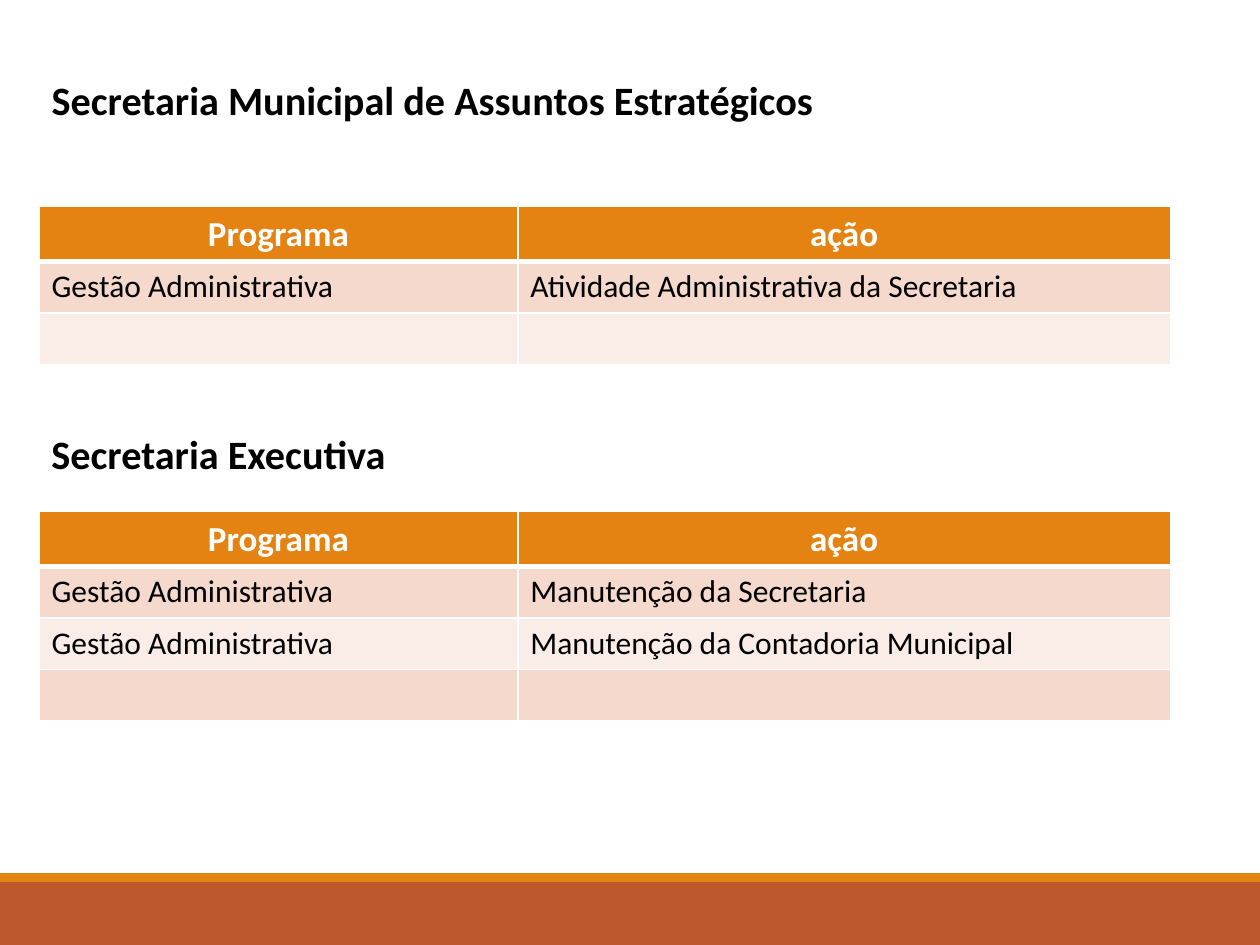
import lxml.etree
import pptx
import pptx.dml.color
import pptx.enum.shapes
import pptx.enum.text
import pptx.oxml.ns
import pptx.util

Inches = pptx.util.Inches
RGBColor = pptx.dml.color.RGBColor

ORANGE = RGBColor(0xE4, 0x83, 0x12)
RUST = RGBColor(0xBD, 0x58, 0x2C)
BAND_DARK = RGBColor(0xF5, 0xD9, 0xCC)
BAND_LIGHT = RGBColor(0xFA, 0xED, 0xE7)
WHITE = RGBColor(0xFF, 0xFF, 0xFF)
BLACK = RGBColor(0, 0, 0)

FONT = "Calibri"
LEFT = Inches(0.31)
HEADING_WIDTH = Inches(8.44)
HEADING_HEIGHT = Inches(0.49)
COLUMN_WIDTHS = (Inches(3.8), Inches(5.18))
ROW_HEIGHT = Inches(0.41)
HEADER = ("Programa", "ação")


def format_text(paragraph, size, color, bold):
    for run in paragraph.runs:
        run.font.name = FONT
        run.font.size = pptx.util.Pt(size)
        run.font.bold = bold
        run.font.color.rgb = color


def add_footer_band(slide, left, top, width, height, color):
    shape = slide.shapes.add_shape(
        pptx.enum.shapes.MSO_SHAPE.RECTANGLE, left, top, width, height)
    shape.shadow.inherit = False
    shape.fill.solid()
    shape.fill.fore_color.rgb = color
    shape.line.fill.background()


def fill_heading(shape, top, text):
    shape.left, shape.top = LEFT, top
    shape.width, shape.height = HEADING_WIDTH, HEADING_HEIGHT
    text_frame = shape.text_frame
    text_frame.text = text
    text_frame.word_wrap = True
    text_frame.auto_size = pptx.enum.text.MSO_AUTO_SIZE.SHAPE_TO_FIT_TEXT
    text_frame.vertical_anchor = pptx.enum.text.MSO_ANCHOR.TOP
    paragraph = text_frame.paragraphs[0]
    paragraph.alignment = pptx.enum.text.PP_ALIGN.LEFT
    format_text(paragraph, 23, BLACK, True)


def set_border(cell, side, width):
    properties = cell._tc.get_or_add_tcPr()
    qn = pptx.oxml.ns.qn
    line = lxml.etree.SubElement(
        properties, qn(f"a:ln{side}"), w=str(pptx.util.Pt(width)))
    fill = lxml.etree.SubElement(line, qn("a:solidFill"))
    lxml.etree.SubElement(fill, qn("a:srgbClr"), val=str(WHITE))


def format_cell(cell, row_index, row_count):
    is_header = row_index == 0
    widths = {
        "L": 1,
        "R": 1,
        "T": 3 if row_index == 1 else 1,
        "B": 3 if is_header else 1,
    }
    for side, width in widths.items():
        set_border(cell, side, width)
    cell.fill.solid()
    paragraph = cell.text_frame.paragraphs[0]
    if is_header:
        cell.fill.fore_color.rgb = ORANGE
        paragraph.alignment = pptx.enum.text.PP_ALIGN.CENTER
        format_text(paragraph, 20, WHITE, True)
    else:
        cell.fill.fore_color.rgb = BAND_DARK if row_index % 2 else BAND_LIGHT
        format_text(paragraph, 18, BLACK, False)


def add_program_table(slide, top, body_rows):
    rows = [HEADER, *body_rows, ("", "")]
    table = slide.shapes.add_table(
        len(rows), len(HEADER), LEFT, top,
        sum(COLUMN_WIDTHS), ROW_HEIGHT * len(rows)).table
    for column, width in zip(table.columns, COLUMN_WIDTHS):
        column.width = width
    for row_index, texts in enumerate(rows):
        table.rows[row_index].height = ROW_HEIGHT
        for column_index, text in enumerate(texts):
            cell = table.cell(row_index, column_index)
            if text:
                cell.text_frame.text = text
            format_cell(cell, row_index, len(rows))


def main():
    presentation = pptx.Presentation()
    presentation.slide_width = Inches(10)
    presentation.slide_height = Inches(7.5)
    slide = presentation.slides.add_slide(presentation.slide_layouts[5])

    width = presentation.slide_width
    add_footer_band(slide, 0, Inches(7), width, Inches(0.5), RUST)
    add_footer_band(slide, 0, Inches(6.93), width, Inches(0.07), ORANGE)

    fill_heading(slide.shapes.title, Inches(0.55),
                 "Secretaria Municipal de Assuntos Estratégicos")
    add_program_table(slide, Inches(1.64), [
        ("Gestão Administrativa", "Atividade Administrativa da Secretaria"),
    ])

    second_heading = slide.shapes.add_textbox(
        LEFT, Inches(3.36), HEADING_WIDTH, HEADING_HEIGHT)
    fill_heading(second_heading, Inches(3.36), "Secretaria Executiva")
    add_program_table(slide, Inches(4.06), [
        ("Gestão Administrativa", "Manutenção da Secretaria"),
        ("Gestão Administrativa", "Manutenção da Contadoria Municipal"),
    ])

    presentation.save("out.pptx")


if __name__ == "__main__":
    main()
